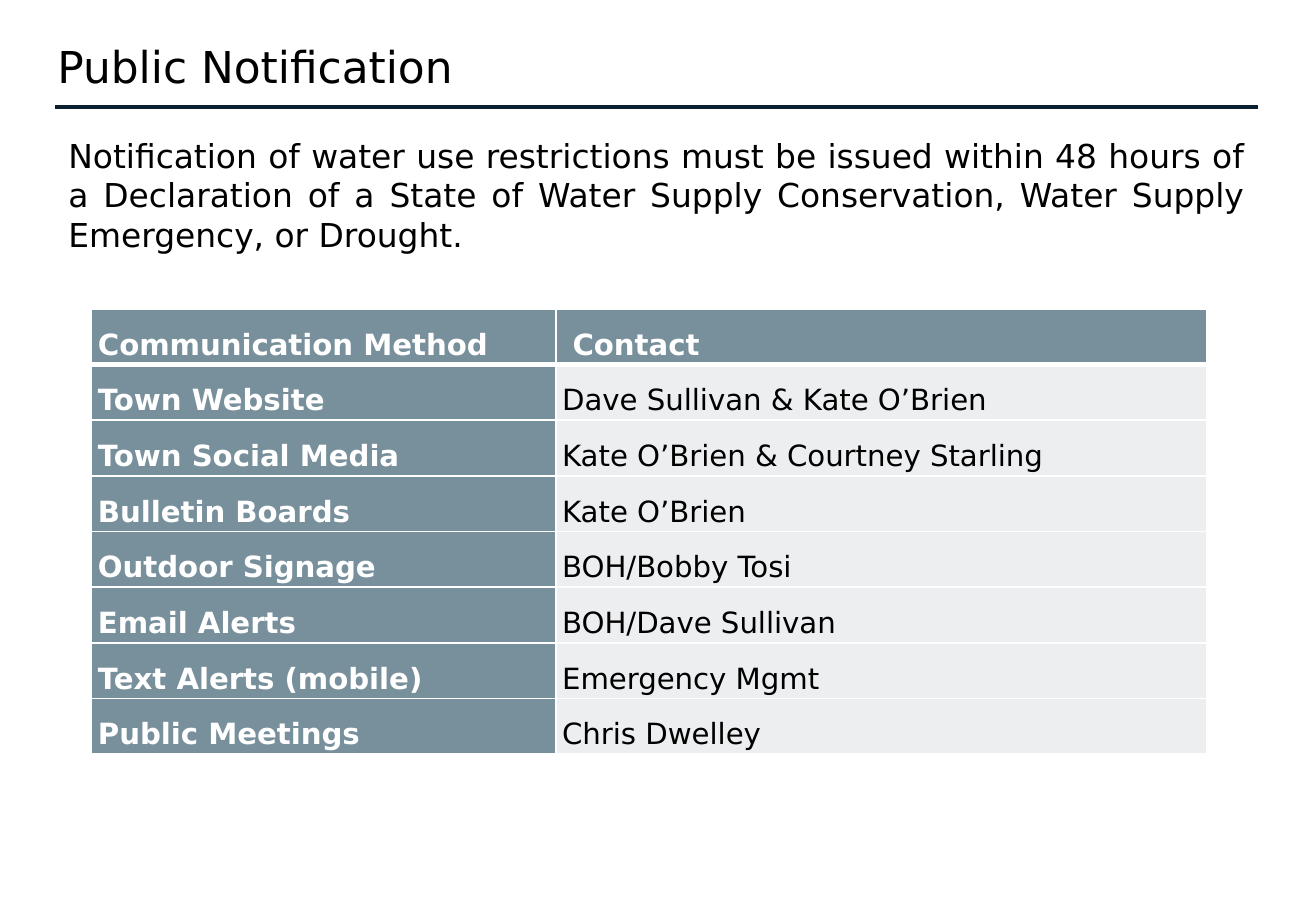
from dataclasses import dataclass

from lxml import etree
from pptx import Presentation
from pptx.dml.color import RGBColor
from pptx.enum.shapes import MSO_CONNECTOR
from pptx.enum.text import MSO_ANCHOR, PP_ALIGN
from pptx.oxml.ns import qn
from pptx.util import Cm, Pt

STRAIGHT = MSO_CONNECTOR.STRAIGHT
LEFT, JUSTIFY = PP_ALIGN.LEFT, PP_ALIGN.JUSTIFY
MIDDLE = MSO_ANCHOR.MIDDLE


@dataclass(frozen=True)
class Theme:
    font: str = "DejaVu Sans"
    black: str = "000000"
    white: str = "FFFFFF"
    navy: str = "091F2F"
    slate: str = "78909C"
    pale: str = "ECEEEF"
    title_size: int = 24
    body_size: int = 18
    table_size: int = 16
    rule_width: float = 2.25
    border: int = 1
    header_border: int = 3


THEME = Theme()

TITLE = "Public Notification"
BODY = ("Notification of water use restrictions must be issued within 48 hours of "
        "a Declaration of a State of Water Supply Conservation, Water Supply "
        "Emergency, or Drought.")
CONTACTS = [
    ("Communication Method", "Contact"),
    ("Town Website", "Dave Sullivan & Kate O’Brien"),
    ("Town Social Media", "Kate O’Brien & Courtney Starling"),
    ("Bulletin Boards", "Kate O’Brien"),
    ("Outdoor Signage", "BOH/Bobby Tosi"),
    ("Email Alerts", "BOH/Dave Sullivan"),
    ("Text Alerts (mobile)", "Emergency Mgmt"),
    ("Public Meetings", "Chris Dwelley"),
]
COLUMN_WIDTHS = (Cm(8.96), Cm(12.56))
ROW_HEIGHT = Cm(1.075)
CELL_INDENT = Cm(0.12)
CONTACT_HEADER_INDENT = Cm(0.32)


def add_run(p, text, size, color, bold=False):
    r = p.add_run()
    r.text = text
    r.font.name = THEME.font
    r.font.size = Pt(size)
    r.font.bold = bold
    r.font.color.rgb = RGBColor.from_string(color)


def add_text(slide, box, text, size, align=LEFT, inset=None):
    """Add a wrapped text box; inset, if given, applies to all four sides."""
    tf = slide.shapes.add_textbox(*box).text_frame
    tf.word_wrap = True
    if inset is not None:
        tf.margin_left = tf.margin_top = tf.margin_right = tf.margin_bottom = inset
    p = tf.paragraphs[0]
    p.alignment = align
    add_run(p, text, size, THEME.black)


def add_rule(slide, left, right, y):
    line = slide.shapes.add_connector(STRAIGHT, left, y, right, y)
    line.line.color.rgb = RGBColor.from_string(THEME.navy)
    line.line.width = Pt(THEME.rule_width)
    etree.SubElement(line._element.spPr, qn("a:effectLst"))


def add_borders(cell, top, bottom):
    """Draw white borders; must run before the cell's fill is set."""
    tc_pr = cell._tc.get_or_add_tcPr()
    widths = {"lnL": THEME.border, "lnR": THEME.border, "lnT": top, "lnB": bottom}
    for tag, width in widths.items():
        ln = etree.SubElement(tc_pr, qn(f"a:{tag}"), w=str(Pt(width)))
        fill = etree.SubElement(ln, qn("a:solidFill"))
        etree.SubElement(fill, qn("a:srgbClr"), val=THEME.white)


def fill_cell(cell, text, row, col):
    is_heading = row == 0 or col == 0
    add_borders(cell,
                top=THEME.header_border if row == 1 else THEME.border,
                bottom=THEME.header_border if row == 0 else THEME.border)
    cell.fill.solid()
    cell.fill.fore_color.rgb = RGBColor.from_string(
        THEME.slate if is_heading else THEME.pale)
    cell.vertical_anchor = MIDDLE
    cell.margin_top = cell.margin_right = cell.margin_bottom = 0
    cell.margin_left = CONTACT_HEADER_INDENT if (row, col) == (0, 1) else CELL_INDENT
    p = cell.text_frame.paragraphs[0]
    p.line_spacing = 1.5
    add_run(p, text, THEME.table_size,
            THEME.white if is_heading else THEME.black, is_heading)


def add_contact_table(slide, left, top):
    table = slide.shapes.add_table(
        len(CONTACTS), len(COLUMN_WIDTHS), left, top,
        sum(COLUMN_WIDTHS), ROW_HEIGHT * len(CONTACTS)).table
    table.first_col = True
    table.horz_banding = False
    for column, width in zip(table.columns, COLUMN_WIDTHS):
        column.width = width
    for row, texts in enumerate(CONTACTS):
        table.rows[row].height = ROW_HEIGHT
        for col, text in enumerate(texts):
            fill_cell(table.cell(row, col), text, row, col)


def main():
    prs = Presentation()
    prs.slide_width, prs.slide_height = Cm(25.4), Cm(17.78)
    slide = prs.slides.add_slide(prs.slide_layouts[6])
    add_text(slide, (Cm(0.86), Cm(0.51), Cm(22.43), Cm(1.12)), TITLE,
             THEME.title_size, inset=Cm(0.25))
    add_rule(slide, Cm(1.07), Cm(24.28), Cm(2.06))
    add_contact_table(slide, Cm(1.77), Cm(5.96))
    add_text(slide, (Cm(1.07), Cm(2.49), Cm(23.21), Cm(2.56)), BODY,
             THEME.body_size, JUSTIFY)
    prs.save("out.pptx")


if __name__ == "__main__":
    main()
